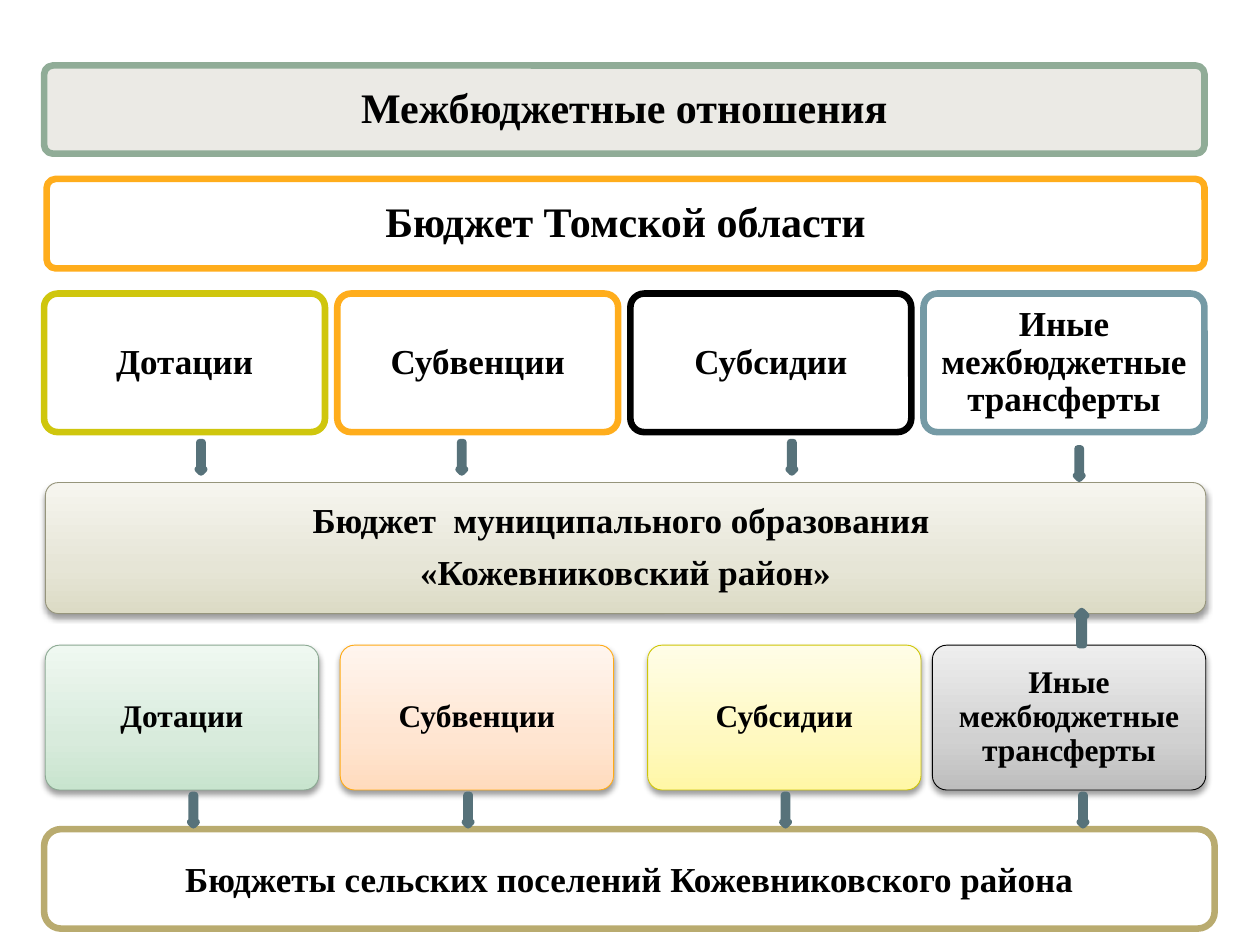
from copy import deepcopy
from lxml.etree import SubElement as Sub
from pptx import Presentation
from pptx.dml.color import RGBColor
from pptx.enum.shapes import MSO_SHAPE as Kind
from pptx.enum.text import MSO_ANCHOR as Anchor, MSO_AUTO_SIZE as Auto, PP_ALIGN as Align
from pptx.oxml.ns import qn
from pptx.util import Inches, Pt

UNIT = 0.1
COLS, ROWS = 100, 75
WIDE = 3.78
KINDS = ["Дотации", "Субвенции", "Субсидии", "Иные межбюджетные трансферты"]


def tint(code):
    return RGBColor.from_string(code)


def grid(*cells):
    return [Inches(UNIT * cell) for cell in cells]


def write(shape, *lines, size=20, inset=0.8, space=0.9, after=0.39):
    frame = shape.text_frame
    frame.word_wrap = True
    frame.auto_size = Auto.NONE
    frame.vertical_anchor = Anchor.MIDDLE
    pad = grid(inset)[0]
    frame.margin_left = frame.margin_right = pad
    frame.margin_top = frame.margin_bottom = pad
    for i, line in enumerate(lines):
        para = frame.add_paragraph() if i else frame.paragraphs[0]
        para.alignment = Align.CENTER
        para.line_spacing = space
        para.space_before = Pt(0)
        para.space_after = Pt(size * after)
        run = para.add_run()
        run.text = line
        font = run.font
        font.name, font.size, font.bold = "Times New Roman", Pt(size), True
        font.color.rgb = tint("000000")


def draw(slide, kind, box, fill, edge, width=WIDE):
    shape = slide.shapes.add_shape(kind, *grid(*box))
    shape.shadow.inherit = False
    shape.fill.solid()
    shape.fill.fore_color.rgb = tint(fill)
    shape.line.color.rgb = tint(edge)
    shape.line.width = Pt(width)
    return shape


def panel(slide, box, fill, edge, width=WIDE, round=0.1):
    shape = draw(slide, Kind.ROUNDED_RECTANGLE, box, fill, edge, width)
    shape.adjustments[0] = round
    return shape


def glow(slide, box, shades, edge):
    shape = panel(slide, box, shades[0], edge, width=0.5)
    shape.fill.gradient()
    shape.fill.gradient_angle = 90
    props = shape._element.spPr
    stops = props.find(".//" + qn("a:gsLst"))
    stops.insert(1, deepcopy(stops[0]))
    for stop, spot, shade in zip(shape.fill.gradient_stops, (0, 0.35, 1), shades):
        stop.position = spot
        stop.color.rgb = tint(shade)
    cast = Sub(props.find(qn("a:effectLst")), qn("a:outerShdw"),
               blurRad=str(Pt(3.5)), dist=str(Pt(2)), dir="5400000", rotWithShape="0")
    color = Sub(cast, qn("a:srgbClr"), val="000000")
    Sub(color, qn("a:alpha"), val="38000")
    return shape


def head(slide, box):
    panel(slide, box, "EBEAE5", "90AC97")
    title = slide.shapes.title
    title.left, title.top, title.width, title.height = grid(*box)
    write(title, "Межбюджетные отношения", size=24, inset=1)
    slide.shapes._spTree.append(title._element)


def region(slide, box):
    shape = panel(slide, box, "FFFFFF", "FFAD1C")
    write(shape, "Бюджет Томской области", size=24, inset=1)


def grants(slide, box):
    left, top, width, height = box
    cell = 22.3
    step = (width - cell) / (len(KINDS) - 1)
    edges = ["CFC60D", "FFAD1C", "000000", "759AA5"]
    for i, (name, edge) in enumerate(zip(KINDS, edges)):
        shape = panel(slide, (left + i * step, top, cell, height), "FFFFFF", edge)
        write(shape, name)


def district(slide, box):
    shape = glow(slide, box, ["DCDBC5", "E6E5D6", "F6F5EF"], "96957C")
    write(shape, "Бюджет  муниципального образования ", "«Кожевниковский район»")


def shares(slide, box):
    left, top, width, height = box
    cell = 21.7
    looks = [
        (0, ["C8E4CE", "D8EBDC", "EFF8F1"], "8CA993"),
        (23.4, ["FFDBBD", "FFE5D1", "FFF5EE"], "FFAB16"),
        (47.8, ["FFF7A6", "FFF9C0", "FFFDE7"], "CFC608"),
        (width - cell, ["BDBDBD", "D1D1D1", "EEEEEE"], "000000"),
    ]
    for name, (shift, shades, edge) in zip(KINDS, looks):
        shape = glow(slide, (left + shift, top, cell, height), shades, edge)
        write(shape, name, size=18, inset=0.7)


def rural(slide, box):
    shape = panel(slide, box, "FFFFFF", "B9AB6F", round=0.17)
    write(shape, "Бюджеты сельских поселений Кожевниковского района",
          inset=0.5, space=1, after=0)


def arrows(slide, spots, kind=Kind.DOWN_ARROW, width=0.5, height=2.4):
    for left, top in spots:
        draw(slide, kind, (left, top, width, height), "759AA5", "57727A")


def main():
    deck = Presentation()
    deck.slide_width, deck.slide_height = grid(COLS, ROWS)
    slide = deck.slides.add_slide(deck.slide_layouts[5])
    head(slide, (3.5, 5.2, 92.1, 7))
    region(slide, (3.7, 14.2, 91.9, 7.1))
    grants(slide, (3.5, 23.3, 92.1, 11))
    district(slide, (3.6, 38.3, 92.1, 10.4))
    shares(slide, (3.6, 51.2, 92.1, 11.5))
    rural(slide, (3.5, 65.8, 92.9, 7.9))
    arrows(slide, [(15.7, 35.1), (36.4, 35.1), (62.6, 35.1), (85.4, 35.6)])
    arrows(slide, [(left, 63.1) for left in (15.1, 36.9, 62.1, 85.7)])
    arrows(slide, [(85.5, 48.5)], Kind.UP_ARROW, 0.7, 2.7)
    deck.save("out.pptx")


if __name__ == "__main__":
    main()
